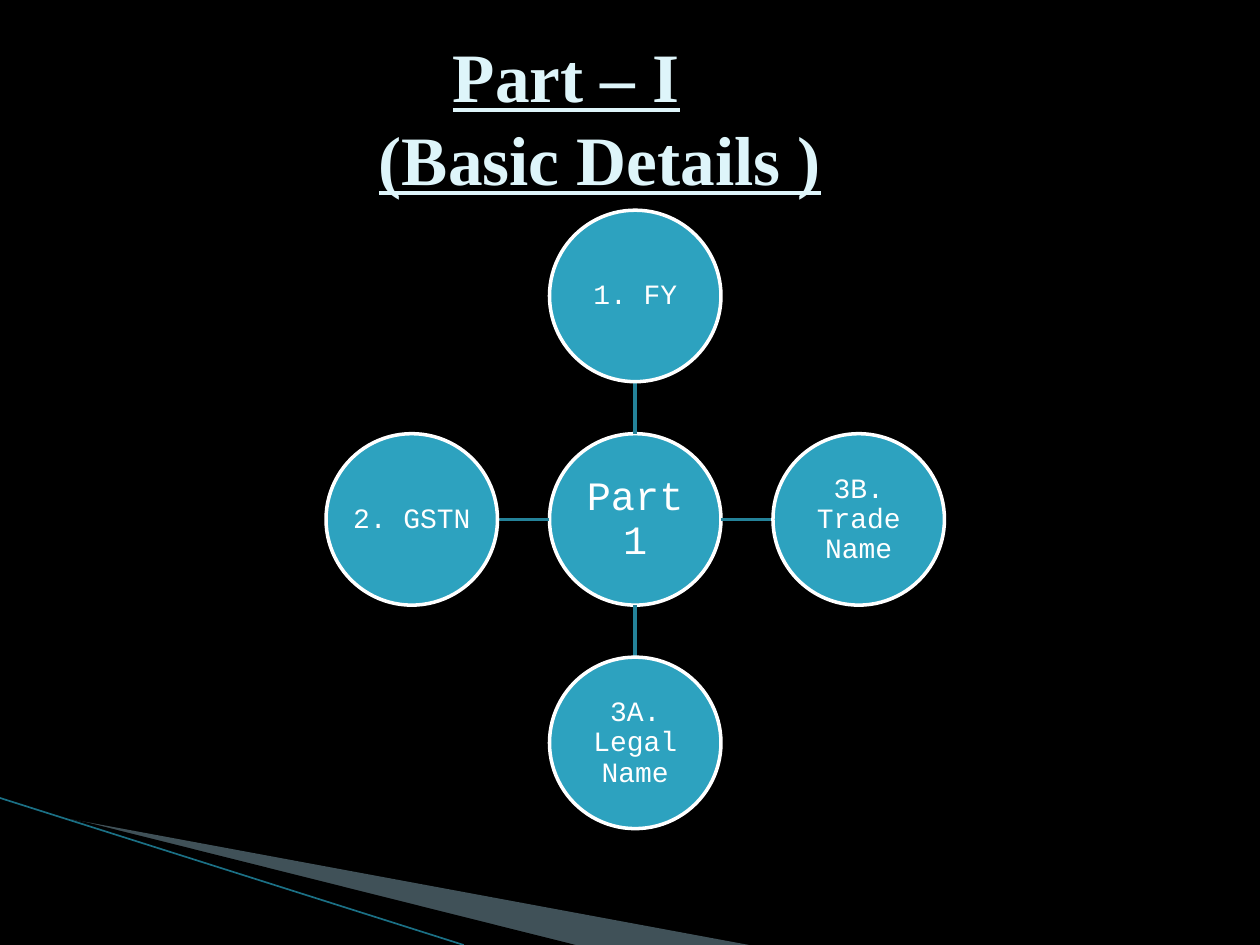
from dataclasses import dataclass

from lxml.etree import SubElement
from pptx import Presentation
from pptx.dml.color import RGBColor
from pptx.enum.shapes import MSO_CONNECTOR, MSO_SHAPE
from pptx.enum.text import MSO_ANCHOR, PP_ALIGN
from pptx.oxml.ns import qn
from pptx.shapes.connector import Connector
from pptx.slide import Slide
from pptx.util import Pt

BLACK = RGBColor(0x00, 0x00, 0x00)
WHITE = RGBColor(0xFF, 0xFF, 0xFF)
PALE_BLUE = RGBColor(0xA0, 0xCB, 0xDC)
DEEP_TEAL = RGBColor(0x1B, 0x70, 0x85)
TEAL = RGBColor(0x2D, 0xA2, 0xBF)
SPOKE_TEAL = RGBColor(0x24, 0x82, 0x99)
TITLE_TINT = RGBColor(0xDE, 0xF5, 0xFA)

HUB_X, HUB_Y = 363, 296.8
DIAMETER, REACH = 98, 127.7
RADIUS = DIAMETER / 2


@dataclass(frozen=True)
class Wedge:
    points: tuple[tuple[float, float], ...]
    color: RGBColor
    opacity: int


@dataclass(frozen=True)
class Detail:
    label: str
    dx: int
    dy: int


@dataclass(frozen=True)
class TitleLine:
    wording: str
    indent: float


WEDGES = (
    Wedge(((39.6, 468.5), (428.4, 540), (328.3, 540)), PALE_BLUE, 40),
    Wedge(((38.2, 467.3), (329, 540), (267.8, 540)), BLACK, 100),
)
DETAILS = (
    Detail("1. FY", 0, -1),
    Detail("3B. Trade Name", 1, 0),
    Detail("3A. Legal Name", 0, 1),
    Detail("2. GSTN", -1, 0),
)
TITLE = (TitleLine("Part – I", 215.7), TitleLine("(Basic Details )", 173.4))


def draw_wedge(slide: Slide, wedge: Wedge) -> None:
    start, *rest = wedge.points
    builder = slide.shapes.build_freeform(*start, scale=Pt(1))
    builder.add_line_segments(rest)
    outline = builder.convert_to_shape()
    outline.shadow.inherit = False
    outline.line.fill.background()
    outline.fill.solid()
    outline.fill.fore_color.rgb = wedge.color
    if wedge.opacity < 100:
        tint = outline._element.spPr.find(f".//{qn('a:srgbClr')}")
        SubElement(tint, qn("a:alpha"), val=str(wedge.opacity * 1000))


def draw_line(slide: Slide, start: tuple[float, float], end: tuple[float, float],
              color: RGBColor, width: float) -> Connector:
    ends = [Pt(value) for value in (*start, *end)]
    line = slide.shapes.add_connector(MSO_CONNECTOR.STRAIGHT, *ends)
    line.line.color.rgb = color
    line.line.width = Pt(width)
    SubElement(line._element.spPr, qn("a:effectLst"))
    return line


def draw_circle(slide: Slide, x: float, y: float, label: str, size: float, inset: float) -> None:
    circle = slide.shapes.add_shape(
        MSO_SHAPE.OVAL, Pt(x - RADIUS), Pt(y - RADIUS), Pt(DIAMETER), Pt(DIAMETER))
    circle.shadow.inherit = False
    circle.fill.solid()
    circle.fill.fore_color.rgb = TEAL
    circle.line.color.rgb = WHITE
    circle.line.width = Pt(2)
    frame = circle.text_frame
    frame.text = label
    frame.word_wrap = True
    frame.vertical_anchor = MSO_ANCHOR.MIDDLE
    frame.margin_left = frame.margin_right = Pt(inset)
    frame.margin_top = frame.margin_bottom = Pt(inset)
    wording = frame.paragraphs[0]
    wording.alignment = PP_ALIGN.CENTER
    wording.line_spacing = 0.9
    font = wording.runs[0].font
    font.name, font.size = "Courier New", Pt(size)
    font.color.rgb = WHITE


def draw_detail(slide: Slide, detail: Detail) -> None:
    near, far = (
        (HUB_X + detail.dx * distance, HUB_Y + detail.dy * distance)
        for distance in (RADIUS, REACH + 50 - DIAMETER + RADIUS - 50))
    draw_line(slide, near, far, SPOKE_TEAL, 2)
    draw_circle(slide, HUB_X + detail.dx * REACH, HUB_Y + detail.dy * REACH,
                detail.label, 16, 0.7)


def draw_title(slide: Slide, lines: tuple[TitleLine, ...]) -> None:
    frame = slide.shapes.add_textbox(Pt(36), Pt(21.6), Pt(648), Pt(90)).text_frame
    frame.word_wrap = True
    frame.vertical_anchor = MSO_ANCHOR.MIDDLE
    frame.text = "\n".join(line.wording for line in lines)
    for paragraph, line in zip(frame.paragraphs, lines):
        paragraph.line_spacing = Pt(47.4)
        paragraph._p.get_or_add_pPr().set("marL", str(Pt(line.indent)))
        font = paragraph.runs[0].font
        font.name, font.size = "Times New Roman", Pt(39.6)
        font.bold = font.underline = True
        font.color.rgb = TITLE_TINT


def main() -> None:
    """Build the Part I basic details slide."""
    deck = Presentation()
    deck.slide_width, deck.slide_height = Pt(720), Pt(540)
    slide = deck.slides.add_slide(deck.slide_layouts[6])
    slide.background.fill.solid()
    slide.background.fill.fore_color.rgb = BLACK
    for wedge in WEDGES:
        draw_wedge(slide, wedge)
    draw_line(slide, (0, 456), (265, 540), DEEP_TEAL, 0.95)
    draw_circle(slide, HUB_X, HUB_Y, "Part 1", 23, 1.2)
    for detail in DETAILS:
        draw_detail(slide, detail)
    draw_title(slide, TITLE)
    deck.save("out.pptx")


if __name__ == "__main__":
    main()
